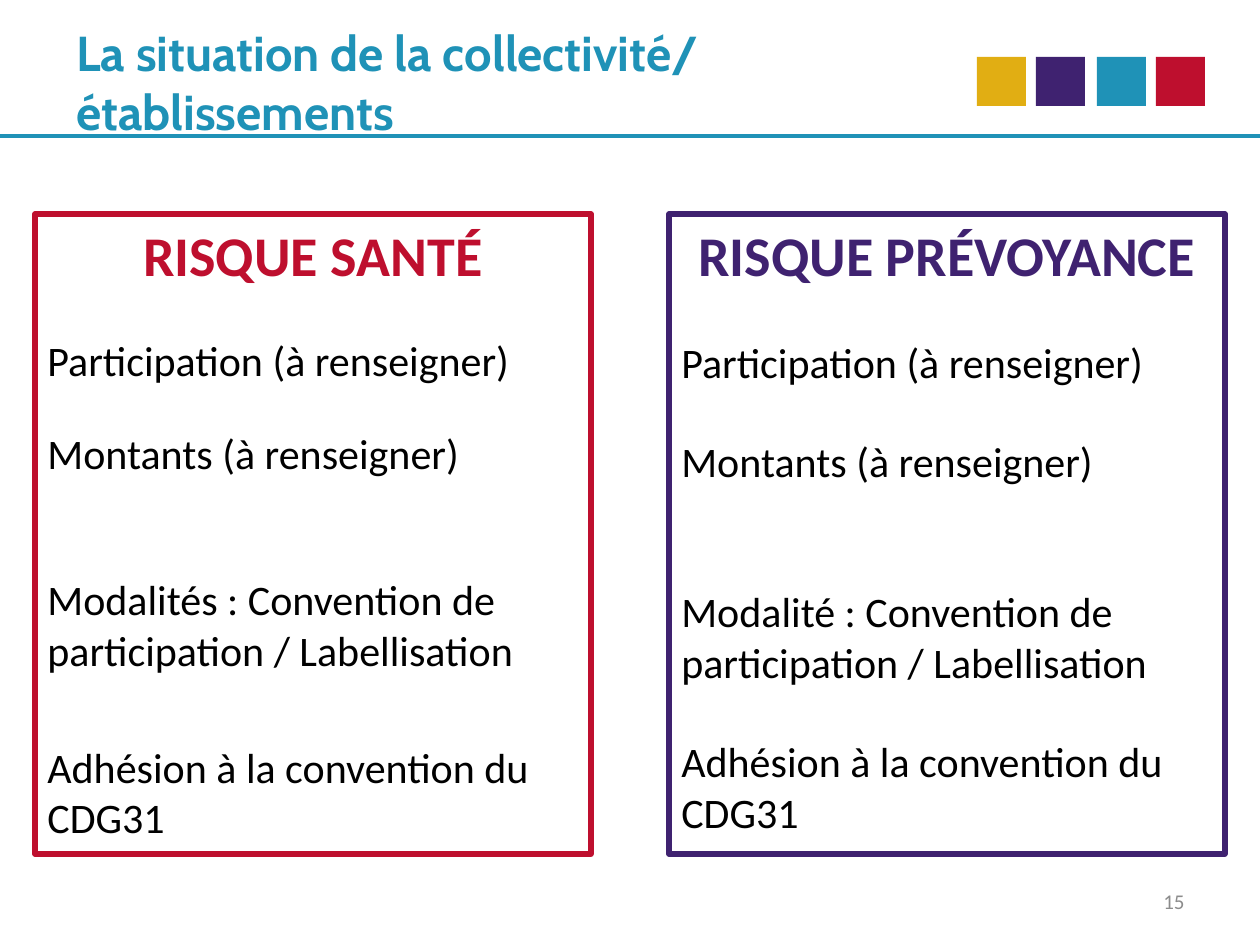
from lxml import etree
from pptx import Presentation
from pptx import util as u
from pptx.dml.color import RGBColor
from pptx.enum import shapes, text
from pptx.oxml.ns import qn

EMU_PER_PX = 914400 / 126
BLUE, RED, PURPLE, GOLD = "1F92B7", "BE0F2E", "3F2270", "E1AE13"
BLACK, GREY = "000000", "8C8C8C"


def px(length):
    return u.Emu(round(length * EMU_PER_PX))


def color(hex_value):
    return RGBColor.from_string(hex_value)


def write(paragraph, words, size, ink, font="Calibri", bold=False,
          align=text.PP_ALIGN.LEFT, before=0):
    paragraph.alignment = align
    paragraph.space_before = u.Pt(before)
    run = paragraph.add_run()
    run.text = words
    run.font.name = font
    run.font.size = u.Pt(size)
    run.font.bold = bold
    run.font.color.rgb = color(ink)


def add_frame(slide, box):
    frame = slide.shapes.add_textbox(*map(px, box)).text_frame
    frame.word_wrap = True
    frame.vertical_anchor = text.MSO_ANCHOR.MIDDLE
    return frame


def add_rectangle(slide, box, fill=None, outline=None):
    rectangle = slide.shapes.add_shape(shapes.MSO_SHAPE.RECTANGLE, *map(px, box))
    rectangle.shadow.inherit = False
    if fill:
        rectangle.fill.solid()
        rectangle.fill.fore_color.rgb = color(fill)
    else:
        rectangle.fill.background()
    if outline:
        rectangle.line.color.rgb = color(outline)
        rectangle.line.width = u.Pt(3)
    else:
        rectangle.line.fill.background()
    return rectangle


def add_header(slide, box):
    left, top, width, height = box
    # Rule under the title
    bottom = top + height
    rule = slide.shapes.add_connector(
        shapes.MSO_CONNECTOR.STRAIGHT, px(left), px(bottom), px(left + width), px(bottom))
    rule.line.color.rgb = color(BLUE)
    rule.line.width = u.Pt(2.25)
    etree.SubElement(rule.element.spPr, qn("a:effectLst"))

    # Coloured squares
    for offset, fill in ((977, GOLD), (1036, PURPLE), (1097, BLUE), (1156, RED)):
        add_rectangle(slide, (left + offset, top + 57, 49, 49), fill=fill)

    # Title
    title = add_frame(slide, (left + 64, top + 29, 893, 105))
    style = dict(size=28, ink=BLUE, font="Cabin", bold=True)
    write(title.paragraphs[0], "La situation de la collectivité/", **style)
    write(title.add_paragraph(), "établissements", **style)


def add_risk_panel(slide, box, heading, ink, items):
    panel = add_rectangle(slide, box, outline=ink).text_frame
    panel.word_wrap = True
    panel.vertical_anchor = text.MSO_ANCHOR.TOP
    write(panel.paragraphs[0], heading, 32, ink, bold=True, align=text.PP_ALIGN.CENTER)
    for words, gap in items:
        write(panel.add_paragraph(), words, 24, BLACK, before=gap)


def add_page_number(slide, box, number):
    frame = add_frame(slide, box)
    write(frame.paragraphs[0], number, 12, GREY, align=text.PP_ALIGN.RIGHT)


def main():
    deck = Presentation()
    deck.slide_width, deck.slide_height = px(1260), px(945)
    slide = deck.slides.add_slide(deck.slide_layouts[6])

    add_header(slide, (0, 0, 1260, 136))
    # Each item carries the space above it in points
    add_risk_panel(slide, (35, 214, 556, 640), "RISQUE SANTÉ", RED, (
        ("Participation (à renseigner)", 27),
        ("Montants (à renseigner)", 24),
        ("Modalités : Convention de participation / Labellisation", 55),
        ("Adhésion à la convention du CDG31", 38),
    ))
    add_risk_panel(slide, (669, 214, 556, 640), "RISQUE PRÉVOYANCE", PURPLE, (
        ("Participation (à renseigner)", 28),
        ("Montants (à renseigner)", 28),
        ("Modalité : Convention de participation / Labellisation", 57),
        ("Adhésion à la convention du CDG31", 28),
    ))
    add_page_number(slide, (903, 876, 294, 50), "15")

    deck.save("out.pptx")


if __name__ == "__main__":
    main()
